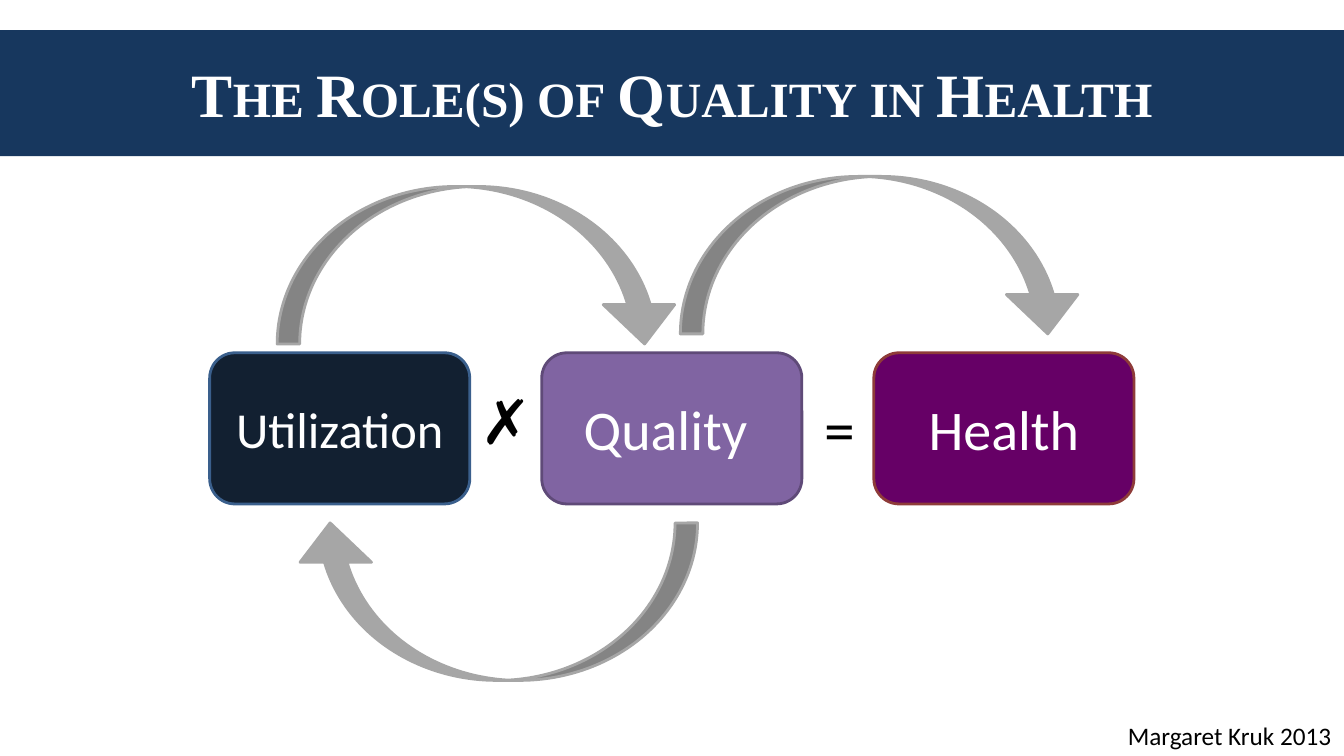
from dataclasses import dataclass

from pptx import Presentation
from pptx.dml.color import RGBColor
from pptx.enum.shapes import MSO_SHAPE
from pptx.enum.text import MSO_ANCHOR, MSO_AUTO_SIZE, PP_ALIGN
from pptx.util import Pt

RECTANGLE = MSO_SHAPE.RECTANGLE
ROUNDED = MSO_SHAPE.ROUNDED_RECTANGLE
CURVED_ARROW = MSO_SHAPE.CURVED_DOWN_ARROW
TOP, MIDDLE = MSO_ANCHOR.TOP, MSO_ANCHOR.MIDDLE
CENTER, LEFT = PP_ALIGN.CENTER, PP_ALIGN.LEFT
GROW = MSO_AUTO_SIZE.SHAPE_TO_FIT_TEXT

COLORS = {
    "white": "FFFFFF",
    "black": "000000",
    "banner": "17375E",
    "arrow": "A6A6A6",
    "utilization": "122031",
    "utilization_edge": "3A5F8C",
    "quality": "8064A2",
    "quality_edge": "5F4A78",
    "health": "660066",
    "health_edge": "8E3B39",
}

SLIDE_WIDTH, SLIDE_HEIGHT = 960, 540
BOX_LEFT, BOX_TOP, BOX_STEP = 149.75, 252, 237.2
BOX_WIDTH, BOX_HEIGHT = 185.8, 108
ARROW_WIDTH, ARROW_HEIGHT = 288, 112.5
ARROW_ADJUSTMENTS = (0.143, 0.454, 0.25)


@dataclass
class Factor:
    text: str
    color: str
    size: float


@dataclass
class Arrow:
    left: float
    top: float
    rotation: float


@dataclass
class Label:
    text: str
    left: float
    top: float
    width: float
    height: float
    size: float
    font: str = "Calibri"
    alignment: PP_ALIGN = CENTER


FACTORS = [
    Factor("Utilization", "utilization", 36),
    Factor("Quality ", "quality", 40),
    Factor("Health", "health", 40),
]
ARROWS = [
    Arrow(198, 133.2, 0),
    Arrow(486, 126, 0),
    Arrow(210.25, 373.5, 180),
]
LABELS = [
    Label("✗", 336.25, 270, 51, 60.5, 44, "Arial"),
    Label("=", 581.75, 275.75, 36.5, 60.5, 44),
    Label("Margaret Kruk 2013", 798.5, 511, 161.5, 29, 18, alignment=LEFT),
]


def rgb(name: str) -> RGBColor:
    return RGBColor.from_string(COLORS[name])


def add_filled(slide, kind, left: float, top: float, width: float, height: float,
               fill: str, line: str = ""):
    shape = slide.shapes.add_shape(kind, Pt(left), Pt(top), Pt(width), Pt(height))
    shape.shadow.inherit = False
    shape.fill.solid()
    shape.fill.fore_color.rgb = rgb(fill)
    if line:
        shape.line.color.rgb = rgb(line)
        shape.line.width = Pt(2)
    else:
        shape.line.fill.background()
    return shape


def write(shape, text: str, color: str, font_format: dict,
          alignment: PP_ALIGN = CENTER, anchor: MSO_ANCHOR = MIDDLE):
    shape.text_frame.vertical_anchor = anchor
    paragraph = shape.text_frame.paragraphs[0]
    paragraph.alignment = alignment
    run = paragraph.add_run()
    run.text = text
    for attribute, value in font_format.items():
        setattr(run.font, attribute, value)
    run.font.color.rgb = rgb(color)
    return run


def add_title(slide) -> None:
    banner = add_filled(slide, RECTANGLE, 0, 21.6, SLIDE_WIDTH, 90, "banner")
    font_format = {"name": "Times New Roman", "size": Pt(44), "bold": True}
    run = write(banner, "The Role(s) of Quality in Health", "white", font_format)
    run._r.get_or_add_rPr().set("cap", "small")


def add_factor(slide, index: int, factor: Factor) -> None:
    box = add_filled(slide, ROUNDED, BOX_LEFT + index * BOX_STEP, BOX_TOP,
                     BOX_WIDTH, BOX_HEIGHT, factor.color, factor.color + "_edge")
    write(box, factor.text, "white", {"name": "Calibri", "size": Pt(factor.size)})


def add_arrow(slide, arrow: Arrow) -> None:
    shape = add_filled(slide, CURVED_ARROW, arrow.left, arrow.top,
                       ARROW_WIDTH, ARROW_HEIGHT, "arrow", "arrow")
    shape.rotation = arrow.rotation
    for index, value in enumerate(ARROW_ADJUSTMENTS):
        shape.adjustments[index] = value


def add_label(slide, label: Label) -> None:
    box = slide.shapes.add_textbox(Pt(label.left), Pt(label.top),
                                   Pt(label.width), Pt(label.height))
    for attribute, value in {"word_wrap": False, "auto_size": GROW}.items():
        setattr(box.text_frame, attribute, value)
    write(box, label.text, "black", {"name": label.font, "size": Pt(label.size)},
          label.alignment, TOP)


def main() -> None:
    presentation = Presentation()
    presentation.slide_width = Pt(SLIDE_WIDTH)
    presentation.slide_height = Pt(SLIDE_HEIGHT)
    slide = presentation.slides.add_slide(presentation.slide_layouts[6])
    add_title(slide)
    for index, factor in enumerate(FACTORS):
        add_factor(slide, index, factor)
    for arrow in ARROWS:
        add_arrow(slide, arrow)
    for label in LABELS:
        add_label(slide, label)
    presentation.save("out.pptx")


if __name__ == "__main__":
    main()
